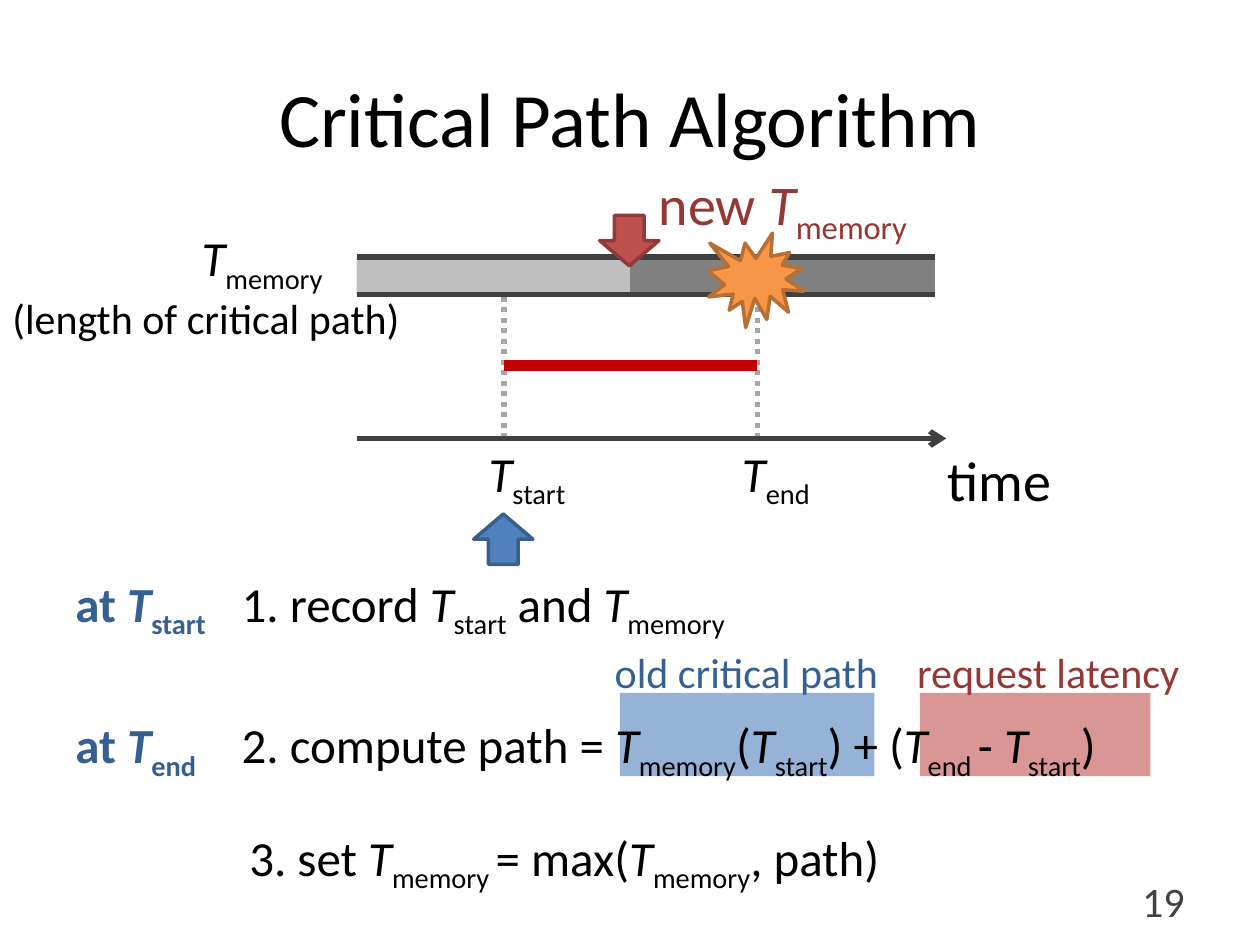
"""Build the Critical Path Algorithm slide."""
from lxml.etree import SubElement
from pptx import Presentation
from pptx.dml.color import RGBColor
from pptx.enum.dml import MSO_LINE
from pptx.enum.shapes import MSO_CONNECTOR, MSO_SHAPE
from pptx.enum.text import MSO_ANCHOR, PP_ALIGN
from pptx.oxml.ns import qn
from pptx.util import Inches, Pt

BLACK = RGBColor(0x00, 0x00, 0x00)
CHARCOAL = RGBColor(0x40, 0x40, 0x40)
MID_GRAY = RGBColor(0x80, 0x80, 0x80)
DOT_GRAY = RGBColor(0xA6, 0xA6, 0xA6)
LIGHT_GRAY = RGBColor(0xBF, 0xBF, 0xBF)
NAVY = RGBColor(0x37, 0x60, 0x92)
MAROON = RGBColor(0x95, 0x37, 0x35)
RED = RGBColor(0xC0, 0x00, 0x00)
PALE_BLUE = RGBColor(0x95, 0xB3, 0xD7)
PALE_RED = RGBColor(0xD9, 0x96, 0x94)
BLUE = RGBColor(0x4F, 0x81, 0xBD)
BLUE_EDGE = RGBColor(0x3A, 0x5F, 0x8C)
BRICK = RGBColor(0xC0, 0x50, 0x4D)
BRICK_EDGE = RGBColor(0x8E, 0x3B, 0x39)
ORANGE = RGBColor(0xF7, 0x96, 0x46)
ORANGE_EDGE = RGBColor(0xB7, 0x6F, 0x34)

BAR_LEFT, BAR_TOP, BAR_RIGHT, BAR_BOTTOM = 2.83, 2.04, 7.42, 2.34
OLD_PATH_END = 5
START, END = 4, 6.01
LATENCY_Y, AXIS_Y = 2.9, 3.48
STEP_TAB = 1.32


def add_run(paragraph, text, size, color, bold=False, italic=False, subscript=False):
    """Append one formatted run to a paragraph."""
    run = paragraph.add_run()
    run.text = text
    font = run.font
    font.name, font.size, font.bold, font.italic = "Calibri", Pt(size), bold, italic
    font.color.rgb = color
    if subscript:
        run._r.get_or_add_rPr().set("baseline", "-25000")


def add_formula(paragraph, formula, size, color, bold=False):
    """Write text in which T{name} stands for an italic T with a subscript."""
    plain, *terms = formula.split("T{")
    if plain:
        add_run(paragraph, plain, size, color, bold)
    for term in terms:
        subscript, _, plain = term.partition("}")
        add_run(paragraph, "T", size, color, bold, italic=True)
        add_run(paragraph, subscript, size, color, bold, subscript=True)
        if plain:
            add_run(paragraph, plain, size, color, bold)


def add_label(slide, box, formula, size=28, color=BLACK, align=PP_ALIGN.LEFT,
              anchor=MSO_ANCHOR.TOP, wrap=True):
    """Add a text box with one formula and return its paragraph."""
    frame = slide.shapes.add_textbox(*map(Inches, box)).text_frame
    frame.word_wrap = wrap
    frame.vertical_anchor = anchor
    paragraph = frame.paragraphs[0]
    paragraph.alignment = align
    add_formula(paragraph, formula, size, color)
    return paragraph


def add_step(slide, box, moment, step, line_spacing=1.0):
    """Add an algorithm step, with its bold moment ahead of a tab stop."""
    paragraph = add_label(slide, box, "")
    paragraph.line_spacing = line_spacing
    tabs = SubElement(paragraph._p.get_or_add_pPr(), qn("a:tabLst"))
    SubElement(tabs, qn("a:tab"), pos=str(Inches(STEP_TAB)), algn="l")
    add_formula(paragraph, moment, 28, NAVY, bold=True)
    add_formula(paragraph, "\t" + step, 28, BLACK)


def add_block(slide, kind, box, fill, edge=None):
    """Add a filled preset shape, outlined only when an edge colour is given."""
    block = slide.shapes.add_shape(kind, *map(Inches, box))
    block.shadow.inherit = False
    block.fill.solid()
    block.fill.fore_color.rgb = fill
    if edge is None:
        block.line.fill.background()
    else:
        block.line.color.rgb = edge
        block.line.width = Pt(2)


def add_line(slide, start, end, color=CHARCOAL, width=3, dash=None, arrow=False):
    """Add a straight line, optionally dashed or with an arrowhead."""
    line = slide.shapes.add_connector(MSO_CONNECTOR.STRAIGHT, *map(Inches, (*start, *end)))
    line.line.color.rgb = color
    line.line.width = Pt(width)
    if dash is not None:
        line.line.dash_style = dash
    properties = line._element.spPr
    if arrow:
        SubElement(properties.find(qn("a:ln")), qn("a:tailEnd"), type="arrow")
    SubElement(properties, qn("a:effectLst"))


def add_timeline(slide):
    """Draw the memory bar, the request and the time axis."""
    for left, fill in ((BAR_LEFT, LIGHT_GRAY), (OLD_PATH_END, MID_GRAY)):
        box = (left, BAR_TOP, BAR_RIGHT - left, BAR_BOTTOM - BAR_TOP)
        add_block(slide, MSO_SHAPE.RECTANGLE, box, fill)
    for x, name in ((END, "end"), (START, "start")):
        add_line(slide, (x, AXIS_Y), (x, BAR_BOTTOM), DOT_GRAY, dash=MSO_LINE.ROUND_DOT)
        add_label(slide, (x - 0.22, 3.47, 1.64, 0.57), f"T{{{name}}}")
    add_line(slide, (START, LATENCY_Y), (END, LATENCY_Y), RED, 6)
    add_line(slide, (BAR_LEFT, AXIS_Y), (7.51, AXIS_Y), arrow=True)
    add_label(slide, (BAR_RIGHT, 3.49, 1.04, 0.64), "time", 32, wrap=False)
    for y in (BAR_TOP, BAR_BOTTOM):
        add_line(slide, (BAR_LEFT, y), (BAR_RIGHT, y))
    add_label(slide, (1.33, 1.76, 1.5, 0.55), "T{memory}", align=PP_ALIGN.CENTER)
    add_label(slide, (0, 2.27, 3.3, 0.5), "(length of critical path)", 24, wrap=False)


def add_markers(slide):
    """Draw the arrows and the burst that mark events on the timeline."""
    add_block(slide, MSO_SHAPE.UP_ARROW, (3.76, 4.08, 0.47, 0.4), BLUE, BLUE_EDGE)
    add_block(slide, MSO_SHAPE.EXPLOSION1, (5.62, 1.85, 0.76, 0.75), ORANGE, ORANGE_EDGE)
    add_block(slide, MSO_SHAPE.DOWN_ARROW, (4.76, 1.71, 0.47, 0.4), BRICK, BRICK_EDGE)
    add_label(slide, (5.13, 1.3, 2.33, 0.64), "new T{memory}", 32, MAROON, wrap=False)


def add_algorithm(slide):
    """Write the three steps and highlight the terms of the second."""
    add_step(slide, (0.5, 4.5, 9, 0.75), "at T{start}", "1. record T{start} and T{memory}")
    for left, width, fill in ((4.92, 2.02, PALE_BLUE), (7.3, 1.83, PALE_RED)):
        add_block(slide, MSO_SHAPE.RECTANGLE, (left, 5.5, width, 0.66), fill)
    add_step(slide, (0.5, 5.36, 9, 0.89), "at T{end}",
             "2. compute path = T{memory}(T{start}) + (T{end }- T{start})", 1.5)
    add_label(slide, (4.78, 5.08, 2.45, 0.55), "old critical path", 24, NAVY)
    add_label(slide, (7.18, 5.08, 2.45, 0.55), "request latency", 24, MAROON)
    add_step(slide, (0.56, 6.25, 6.88, 1.11), "",
             "3. set T{memory }= max(T{memory}, path)", 1.5)


def main():
    """Create and save the presentation."""
    deck = Presentation()
    deck.slide_width, deck.slide_height = Inches(10), Inches(7.5)
    slide = deck.slides.add_slide(deck.slide_layouts[6])
    add_label(slide, (0.5, 0.3, 9, 1.25), "Critical Path Algorithm", 44,
              align=PP_ALIGN.CENTER, anchor=MSO_ANCHOR.MIDDLE)
    add_timeline(slide)
    add_algorithm(slide)
    add_markers(slide)
    add_label(slide, (7.17, 6.95, 2.33, 0.4), "19", 24, CHARCOAL,
              PP_ALIGN.RIGHT, MSO_ANCHOR.MIDDLE)
    deck.save("out.pptx")


if __name__ == "__main__":
    main()
